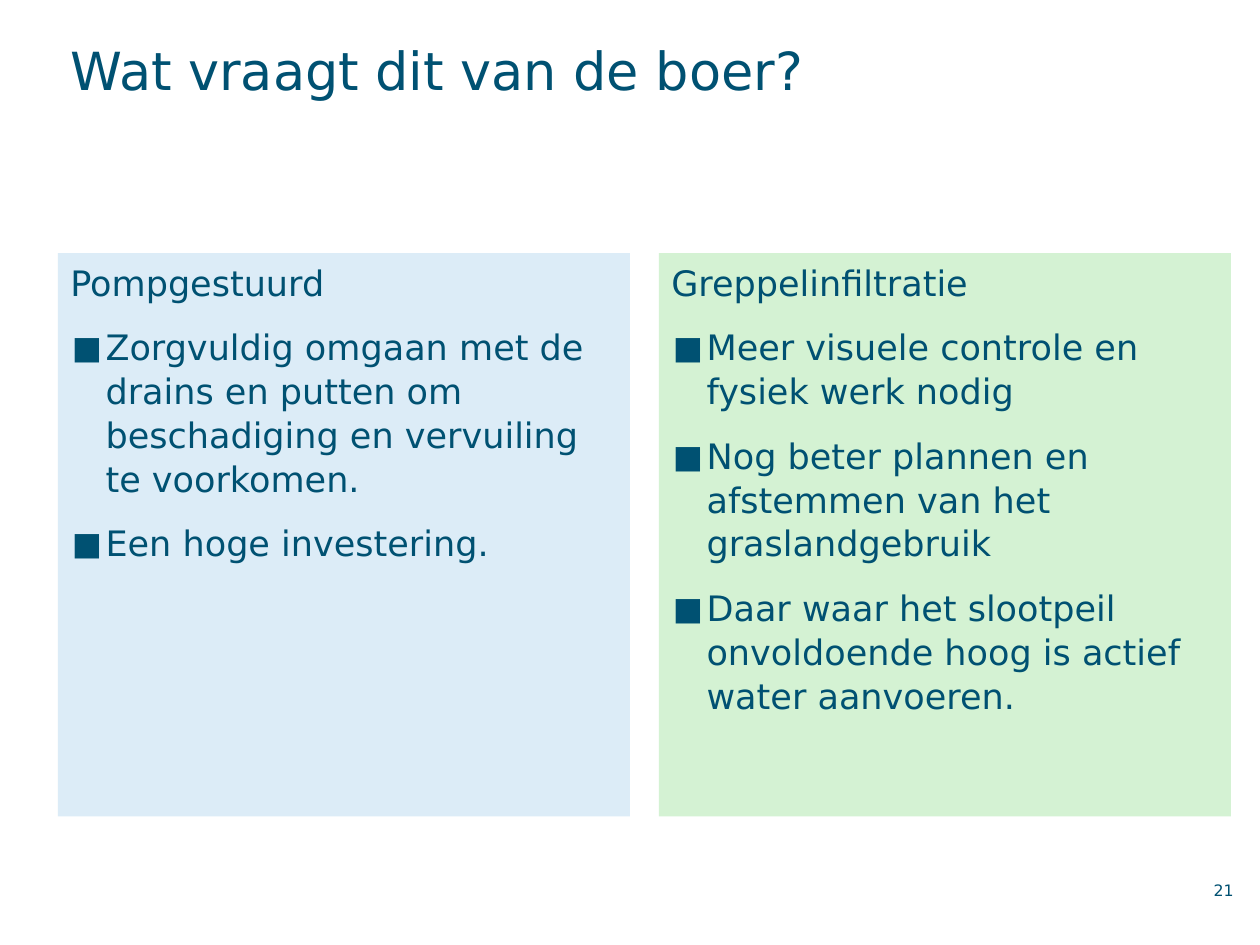
import pptx
import pptx.util
import pptx.dml.color
import pptx.enum.shapes
import pptx.enum.text
import pptx.oxml
import pptx.oxml.ns
from pptx.util import Inches

TEAL = pptx.dml.color.RGBColor(0x00, 0x51, 0x72)
BLUE = pptx.dml.color.RGBColor(0xDC, 0xEC, 0xF7)
GREEN = pptx.dml.color.RGBColor(0xD4, 0xF2, 0xD3)
FONT = "DejaVu Sans"

TITLE = "Wat vraagt dit van de boer?"
PAGE = "21"
PANELS = [
    (BLUE, "Pompgestuurd", [
        "Zorgvuldig omgaan met de drains en putten om beschadiging en vervuiling te voorkomen.",
        "Een hoge investering.",
    ]),
    (GREEN, "Greppelinfiltratie", [
        "Meer visuele controle en fysiek werk nodig",
        "Nog beter plannen en afstemmen van het graslandgebruik",
        "Daar waar het slootpeil onvoldoende hoog is actief water aanvoeren.",
    ]),
]
LEFT, TOP, WIDTH, HEIGHT, GAP = 0.46, 2.01, 4.54, 4.47, 0.23
BULLET = [
    f'<a:buClr {{ns}}><a:srgbClr val="{TEAL}"/></a:buClr>',
    '<a:buSzPct {ns} val="140000"/>',
    f'<a:buFont {{ns}} typeface="{FONT}"/>',
    '<a:buChar {ns} char="▪"/>',
]


def add_bullet(p):
    pPr = p._p.get_or_add_pPr()
    pPr.set("marL", str(Inches(0.28)))
    pPr.set("indent", str(-Inches(0.28)))
    for xml in BULLET:
        pPr.append(pptx.oxml.parse_xml(xml.format(ns=pptx.oxml.ns.nsdecls("a"))))


def write(p, text, size, spacing, before=0):
    p.line_spacing = pptx.util.Pt(spacing)
    p.space_before = pptx.util.Pt(before)
    r = p.add_run()
    r.text = text
    r.font.size = pptx.util.Pt(size)
    r.font.name = FONT
    r.font.color.rgb = TEAL


def set_frame(tf, left, top, right, bottom):
    tf.word_wrap = True
    tf.vertical_anchor = pptx.enum.text.MSO_ANCHOR.TOP
    tf.margin_left, tf.margin_top = Inches(left), Inches(top)
    tf.margin_right, tf.margin_bottom = Inches(right), Inches(bottom)


def add_text(s, box, insets, text, size, spacing, align):
    tf = s.shapes.add_textbox(*map(Inches, box)).text_frame
    set_frame(tf, *insets)
    p = tf.paragraphs[0]
    p.alignment = align
    write(p, text, size, spacing)


def add_panel(s, left, color, heading, points):
    sp = s.shapes.add_shape(pptx.enum.shapes.MSO_SHAPE.RECTANGLE,
                            Inches(left), Inches(TOP), Inches(WIDTH), Inches(HEIGHT))
    sp.shadow.inherit = False
    sp.fill.solid()
    sp.fill.fore_color.rgb = color
    sp.line.fill.background()
    tf = sp.text_frame
    set_frame(tf, 0.1, 0.05, 0.1, 0.05)
    tf.paragraphs[0].alignment = pptx.enum.text.PP_ALIGN.LEFT
    write(tf.paragraphs[0], heading, 20, 25)
    for point in points:
        p = tf.add_paragraph()
        p.alignment = pptx.enum.text.PP_ALIGN.LEFT
        add_bullet(p)
        write(p, point, 20, 25, 12)


def main():
    prs = pptx.Presentation()
    prs.slide_width, prs.slide_height = Inches(10), Inches(7.5)
    s = prs.slides.add_slide(prs.slide_layouts[6])
    add_text(s, (0.54, 0.25, 9.23, 0.87), (0.02, 0, 0.1, 0.35),
             TITLE, 30, 40, pptx.enum.text.PP_ALIGN.LEFT)
    for i, panel in enumerate(PANELS):
        add_panel(s, LEFT + i * (WIDTH + GAP), *panel)
    add_text(s, (9.32, 6.97, 0.51, 0.18), (0.1, 0, 0.04, 0),
             PAGE, 9, 12, pptx.enum.text.PP_ALIGN.RIGHT)
    prs.save("out.pptx")


if __name__ == "__main__":
    main()
